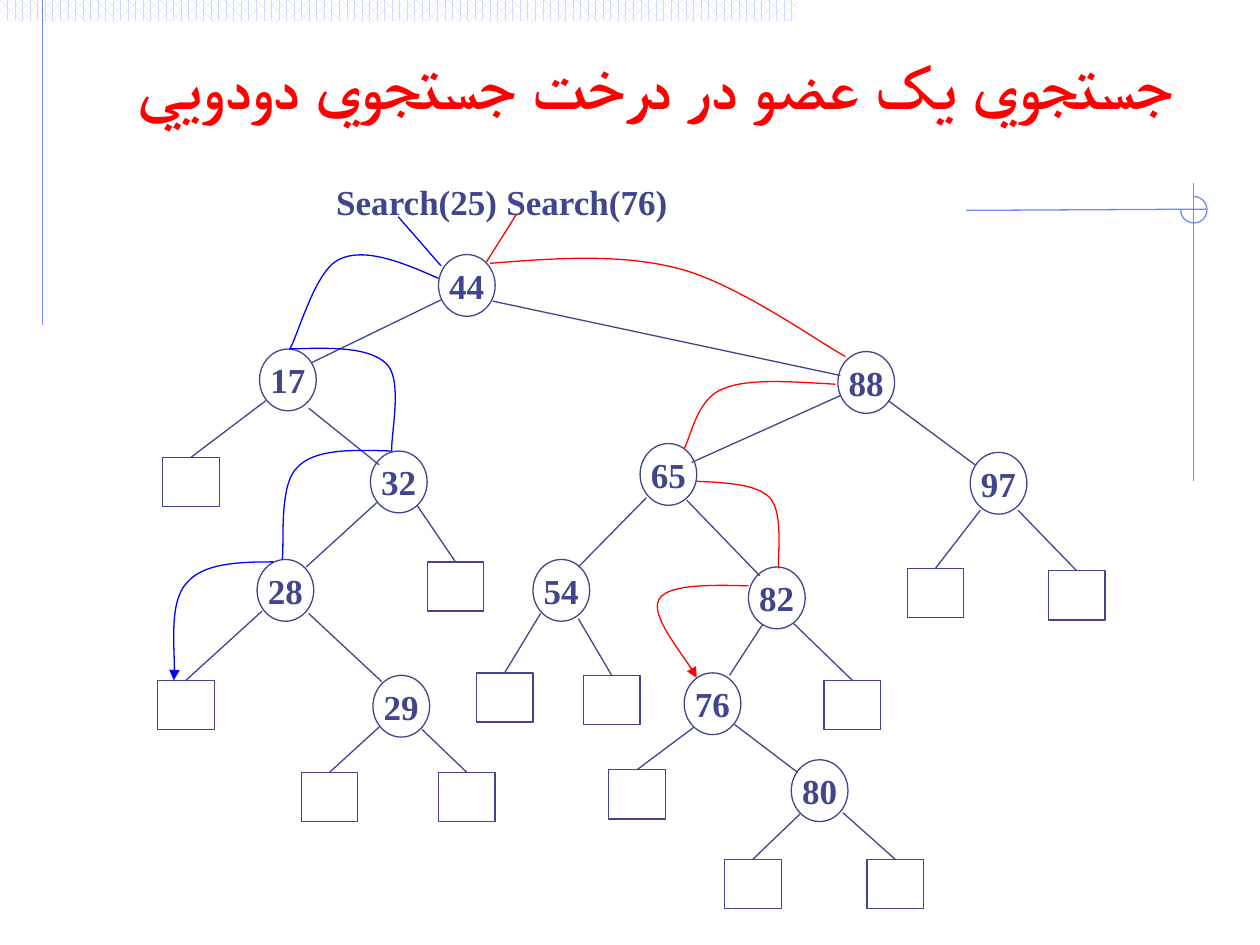
from pptx import Presentation
from pptx.dml.color import RGBColor
from pptx.enum.dml import MSO_PATTERN
from pptx.enum.shapes import MSO_CONNECTOR, MSO_SHAPE
from pptx.enum.text import MSO_ANCHOR, MSO_AUTO_SIZE, PP_ALIGN
from pptx.oxml.ns import qn
from pptx.util import Inches, Pt
from lxml import etree

STRAIGHT = MSO_CONNECTOR.STRAIGHT
OVAL, RECT, ARC = MSO_SHAPE.OVAL, MSO_SHAPE.RECTANGLE, MSO_SHAPE.ARC
TOP = 0  # connection site at the middle of a rectangle's upper side

COLORS = {"tree": "40458C", "blue": "0000FF", "red": "FF0000",
          "frame": "6F89F7", "strip": "CFDBFD", "white": "FFFFFF"}
NODE_W, NODE_H, LEAF_H = 0.45, 0.49, 0.39

# Left and top of each key's circle
NODES = {44: (3.48, 2.02), 32: (2.94, 3.58), 65: (5.08, 3.52), 88: (6.65, 2.79),
         28: (2.04, 4.44), 17: (2.06, 2.77), 80: (6.28, 6.03), 76: (5.43, 5.34),
         97: (7.7, 3.59), 82: (5.94, 4.5), 54: (4.23, 4.44), 29: (2.96, 5.36)}

# Edges between keys: start and end
EDGES = [((3.5, 2.38), (2.47, 2.88)), ((3.91, 2.39), (6.67, 2.98)),
         ((2.45, 3.24), (3.01, 3.69)), ((2.99, 3.99), (2.43, 4.5)),
         ((2.45, 4.87), (3.03, 5.41)), ((6.67, 3.14), (5.49, 3.67)),
         ((7.05, 3.18), (7.74, 3.69)), ((5.45, 3.97), (6.03, 4.57)),
         ((5.13, 3.95), (4.59, 4.5)), ((6.05, 4.96), (5.79, 5.36)),
         ((5.83, 5.75), (6.33, 6.13))]

# Empty leaves: left and top of the box, start of the edge that reaches it
LEAVES = [((7.2, 4.51), (7.78, 4.05)), ((4.83, 6.11), (5.51, 5.77)),
          ((6.54, 5.4), (6.3, 4.95)), ((8.32, 4.53), (8.08, 4.05)),
          ((1.25, 5.4), (2.08, 4.85)), ((1.29, 3.63), (2.11, 3.18)),
          ((2.39, 6.13), (3.01, 5.77)), ((3.48, 6.13), (3.35, 5.79)),
          ((3.39, 4.46), (3.31, 4.01)), ((3.78, 5.34), (4.29, 4.87)),
          ((4.63, 5.36), (4.59, 4.91)), ((5.75, 6.82), (6.35, 6.46)),
          ((6.88, 6.82), (6.69, 6.45))]

# Searches: label, its left, color, line to the root, Bezier curves of the route
SEARCHES = [
    ("Search(25)", 2.57, "blue", ((3.16, 1.72), (3.5, 2.11)), [
        [(3.48, 2.21), (3.19, 2.08), (2.89, 1.96), (2.69, 2.06),
         (2.5, 2.15), (2.37, 2.65), (2.3, 2.77)],
        [(2.3, 2.77), (2.62, 2.76), (2.93, 2.75), (3.07, 2.89),
         (3.2, 3.02), (3.1, 3.46), (3.11, 3.58)],
        [(3.11, 3.58), (2.8, 3.57), (2.5, 3.56), (2.36, 3.71),
         (2.21, 3.85), (2.26, 4.32), (2.24, 4.44)],
        [(2.17, 4.46), (1.89, 4.46), (1.61, 4.47), (1.48, 4.63),
         (1.34, 4.78), (1.4, 5.27), (1.38, 5.4)]]),
    ("Search(76)", 3.92, "red", ((4.1, 1.7), (3.86, 2.08)), [
        [(3.89, 2.09), (4.4, 2.05), (4.91, 2.01), (5.38, 2.13),
         (5.85, 2.25), (6.49, 2.71), (6.71, 2.83)],
        [(6.63, 3.05), (6.28, 3.03), (5.93, 3), (5.73, 3.09),
         (5.53, 3.17), (5.48, 3.48), (5.43, 3.56)],
        [(5.53, 3.82), (5.76, 3.83), (6, 3.84), (6.11, 3.95),
         (6.22, 4.07), (6.17, 4.42), (6.18, 4.51)],
        [(5.94, 4.65), (5.62, 4.64), (5.29, 4.64), (5.23, 4.76),
         (5.16, 4.88), (5.48, 5.27), (5.53, 5.38)]]),
]


def rgb(name):
    return RGBColor.from_string(COLORS[name])


def set_line(s, color):
    s.line.color.rgb = rgb(color)
    s.line.width = Pt(0.75)


def add_outline(slide, kind, x, y, w, h, color="tree"):
    s = slide.shapes.add_shape(kind, *map(Inches, (x, y, w, h)))
    s.shadow.inherit = False
    s.fill.background()
    set_line(s, color)
    return s


def add_line(slide, start, end, color="tree"):
    c = slide.shapes.add_connector(STRAIGHT, *map(Inches, (*start, *end)))
    etree.SubElement(c._element.spPr, qn("a:effectLst"))
    set_line(c, color)
    return c


def add_curve(slide, points, color, arrow):
    """Draw cubic Bezier segments; each takes three points after the start."""
    emu = [(Inches(x), Inches(y)) for x, y in points]
    builder = slide.shapes.build_freeform(*emu[0])
    builder.add_line_segments(emu[1:], close=False)
    s = builder.convert_to_shape()
    s.shadow.inherit = False
    s.fill.background()
    set_line(s, color)
    steps = list(s._element.iter(qn("a:lnTo")))
    for i in range(0, len(steps), 3):
        cubic = etree.Element(qn("a:cubicBezTo"))
        steps[i].addprevious(cubic)
        for step in steps[i:i + 3]:
            cubic.append(step[0])
            step.getparent().remove(step)
    if arrow:
        ln = s._element.spPr.find(qn("a:ln"))
        etree.SubElement(ln, qn("a:tailEnd"), type="triangle")


def set_text(s, text, font, size, color, align, wrap=False):
    tf = s.text_frame
    tf.word_wrap = wrap
    tf.text = text
    p = tf.paragraphs[0]
    p.alignment = align
    r = p.runs[0]
    r.font.name, r.font.size, r.font.bold = font, Pt(size), True
    r.font.color.rgb = rgb(color)
    # Complex scripts take their font from a:cs
    etree.SubElement(r._r.get_or_add_rPr(), qn("a:cs"), typeface=font)
    return tf


def add_label(slide, text, x):
    s = slide.shapes.add_textbox(*map(Inches, (x, 1.38, 1.48, 0.43)))
    tf = set_text(s, text, "Times New Roman", 20, "tree", PP_ALIGN.LEFT)
    tf.auto_size = MSO_AUTO_SIZE.SHAPE_TO_FIT_TEXT


def add_node(slide, key, x, y):
    s = add_outline(slide, OVAL, x, y, NODE_W, NODE_H)
    tf = set_text(s, str(key), "Times New Roman", 20, "tree", PP_ALIGN.CENTER)
    tf.vertical_anchor = MSO_ANCHOR.MIDDLE


def add_leaf(slide, corner, start):
    box = add_outline(slide, RECT, *corner, NODE_W, LEAF_H)
    add_line(slide, start, corner).end_connect(box, TOP)


def add_frame(slide):
    strip = slide.shapes.add_shape(RECT, 0, 0, Inches(6.33), Inches(0.17))
    strip.shadow.inherit = False
    strip.fill.patterned()
    strip.fill.pattern = MSO_PATTERN.PERCENT_60
    strip.fill.fore_color.rgb = rgb("strip")
    strip.fill.back_color.rgb = rgb("white")
    strip.line.fill.background()
    for start, end in [((9.47, 3.82), (9.47, 1.45)), ((9.57, 1.66), (7.67, 1.67)),
                       ((0.34, 0), (0.34, 2.58))]:
        add_line(slide, start, end, "frame")
    arc = add_outline(slide, ARC, 9.37, 1.56, 0.21, 0.21, "frame")
    arc.adjustments[1] = 108  # ends at 180 degrees, 0.6 per degree


def add_title(slide, text):
    s = slide.shapes.add_textbox(*map(Inches, (0.21, 0.32, 9.21, 1.25)))
    tf = set_text(s, text, "Roboto", 36, "red", PP_ALIGN.RIGHT, wrap=True)
    tf.vertical_anchor = MSO_ANCHOR.TOP  # keeps clear of the search labels
    tf.paragraphs[0]._p.get_or_add_pPr().set("rtl", "1")


def main():
    prs = Presentation()
    prs.slide_width, prs.slide_height = Inches(10), Inches(7.5)
    slide = prs.slides.add_slide(prs.slide_layouts[6])

    add_frame(slide)
    # Search tree
    for key, corner in NODES.items():
        add_node(slide, key, *corner)
    for start, end in EDGES:
        add_line(slide, start, end)
    for corner, start in LEAVES:
        add_leaf(slide, corner, start)
    # Search routes, with an arrow on the last curve
    for text, x, color, entry, curves in SEARCHES:
        add_label(slide, text, x)
        add_line(slide, *entry, color)
        for curve in curves:
            add_curve(slide, curve, color, arrow=curve is curves[-1])
    add_title(slide, "جستجوي يک عضو در درخت جستجوي دودويي")
    prs.save("out.pptx")


if __name__ == "__main__":
    main()
